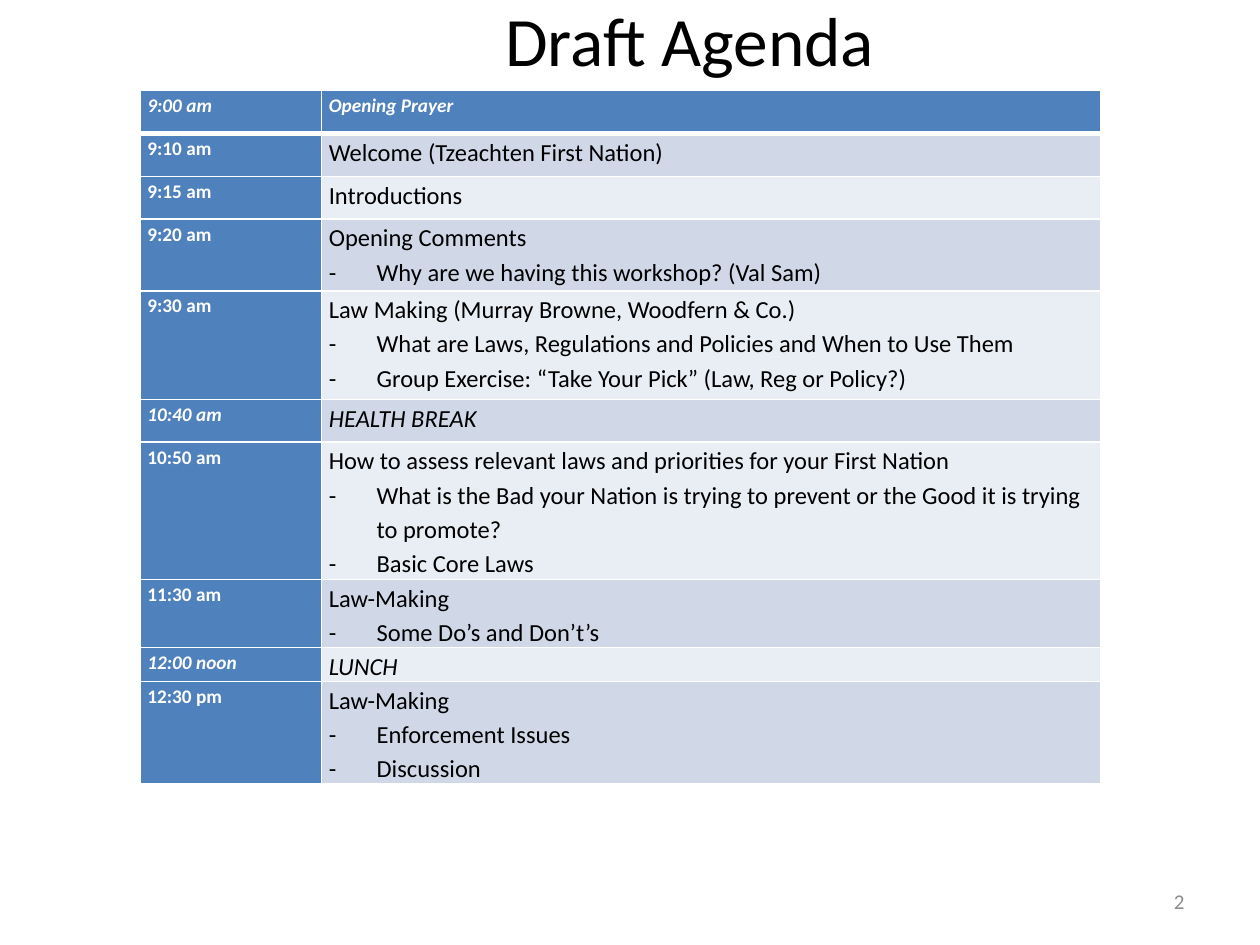
from lxml import etree
from pptx import Presentation, util as u
from pptx.dml.color import RGBColor
from pptx.enum import text
from pptx.oxml.ns import qn

COLORS = {
    "accent": "4F81BD",
    "dark_band": "D0D8E8",
    "light_band": "E9EDF4",
    "white": "FFFFFF",
    "black": "000000",
    "grey": "8C8C8C",
}
FONT = "Calibri"
TITLE_ONLY = 5
GRID_COLUMNS, GRID_ROWS = 100, 75

# time, row height in grid rows, heading, bullets, italic
AGENDA = [
    ("9:00 am", 3.4, "Opening Prayer", [], True),
    ("9:10 am", 3.4, "Welcome (Tzeachten First Nation)", [], False),
    ("9:15 am", 3.4, "Introductions", [], False),
    ("9:20 am", 5.7, "Opening Comments",
     ["Why are we having this workshop? (Val Sam)"], False),
    ("9:30 am", 8.6, "Law Making (Murray Browne, Woodfern & Co.)",
     ["What are Laws, Regulations and Policies and When to Use Them",
      "Group Exercise: “Take Your Pick” (Law, Reg or Policy?)"], False),
    ("10:40 am", 3.4, "HEALTH BREAK", [], True),
    ("10:50 am", 10.9, "How to assess relevant laws and priorities for your First Nation",
     ["What is the Bad your Nation is trying to prevent or the Good it is trying to promote?",
      "Basic Core Laws"], False),
    ("11:30 am", 5.4, "Law-Making", ["Some Do’s and Don’t’s"], False),
    ("12:00 noon", 2.7, "LUNCH", [], True),
    ("12:30 pm", 8.1, "Law-Making", ["Enforcement Issues", "Discussion"], False),
]


def write(paragraph, words, size, color="black", bold=False, italic=False,
          align=None, spacing=None, bullet=None):
    run = paragraph.add_run()
    run.text = words
    font = run.font
    font.name, font.size, font.bold, font.italic = FONT, u.Pt(size), bold, italic
    font.color.rgb = RGBColor.from_string(COLORS[color])
    paragraph.alignment = align
    paragraph.line_spacing = spacing
    if bullet:
        properties = paragraph._p.get_or_add_pPr()
        indent = u.Inches(0.38)
        properties.set("marL", str(indent))
        properties.set("indent", str(-indent))
        etree.SubElement(properties, qn("a:buFont"), typeface=FONT)
        etree.SubElement(properties, qn("a:buChar"), char=bullet)


def draw_border(cell, side, width):
    """Side is L, R, T or B; the width is in points."""
    line = etree.SubElement(cell._tc.get_or_add_tcPr(), qn("a:ln" + side),
                            w=str(u.Pt(width)))
    fill = etree.SubElement(line, qn("a:solidFill"))
    etree.SubElement(fill, qn("a:srgbClr"), val=COLORS["white"])


class AgendaSlide:
    def __init__(self, presentation):
        self.column = presentation.slide_width / GRID_COLUMNS
        self.row = presentation.slide_height / GRID_ROWS
        self.slide = presentation.slides.add_slide(presentation.slide_layouts[TITLE_ONLY])

    def box(self, left, top, width, height):
        """Turn grid columns and rows into lengths."""
        return (u.Emu(round(left * self.column)), u.Emu(round(top * self.row)),
                u.Emu(round(width * self.column)), u.Emu(round(height * self.row)))

    def title(self, words, *place):
        shape = self.slide.shapes.title
        shape.left, shape.top, shape.width, shape.height = self.box(*place)
        frame = shape.text_frame
        frame.auto_size = text.MSO_AUTO_SIZE.NONE
        frame.vertical_anchor = text.MSO_ANCHOR.MIDDLE
        write(frame.paragraphs[0], words, 39.6, align=text.PP_ALIGN.CENTER)

    def page_number(self, number, *place):
        frame = self.slide.shapes.add_textbox(*self.box(*place)).text_frame
        frame.word_wrap = True
        frame.vertical_anchor = text.MSO_ANCHOR.MIDDLE
        write(frame.paragraphs[0], str(number), 12, "grey", align=text.PP_ALIGN.RIGHT)

    def cell(self, cell, fill, header):
        """Format an agenda cell and return its text frame."""
        cell.margin_left = cell.margin_right = u.Inches(0.06)
        cell.margin_top = cell.margin_bottom = 0
        for side in "LRTB":
            draw_border(cell, side, 3 if header and side == "B" else 1)
        cell.fill.solid()
        cell.fill.fore_color.rgb = RGBColor.from_string(COLORS[fill])
        return cell.text_frame

    def agenda(self, entries, left, top, column_widths):
        heights = [entry[1] for entry in entries]
        place = self.box(left, top, sum(column_widths), sum(heights))
        table = self.slide.shapes.add_table(len(entries), len(column_widths), *place).table
        for column, width in zip(table.columns, column_widths):
            column.width = u.Emu(round(width * self.column))

        label = dict(size=11, color="white", bold=True, spacing=1.15)
        body = dict(size=14, spacing=1.15)
        for index, (time, height, heading, bullets, italic) in enumerate(entries):
            table.rows[index].height = u.Emu(round(height * self.row))
            header = index == 0
            band = "accent" if header else "dark_band" if index % 2 else "light_band"
            time_frame = self.cell(table.cell(index, 0), "accent", header)
            topic_frame = self.cell(table.cell(index, 1), band, header)
            write(time_frame.paragraphs[0], time, italic=italic, **label)
            write(topic_frame.paragraphs[0], heading, italic=italic,
                  **(label if header else body))
            for bullet in bullets:
                write(topic_frame.add_paragraph(), bullet, bullet="-", **body)


def main():
    presentation = Presentation()
    presentation.slide_width, presentation.slide_height = u.Inches(10), u.Inches(7.5)
    page = AgendaSlide(presentation)
    page.title("Draft Agenda", 15.4, 0.85, 78.7, 4.4)
    page.page_number(2, 71.7, 69.5, 23.3, 4)
    page.agenda(AGENDA, 11.1, 7.2, (14.4, 61.9))
    presentation.save("out.pptx")


if __name__ == "__main__":
    main()
